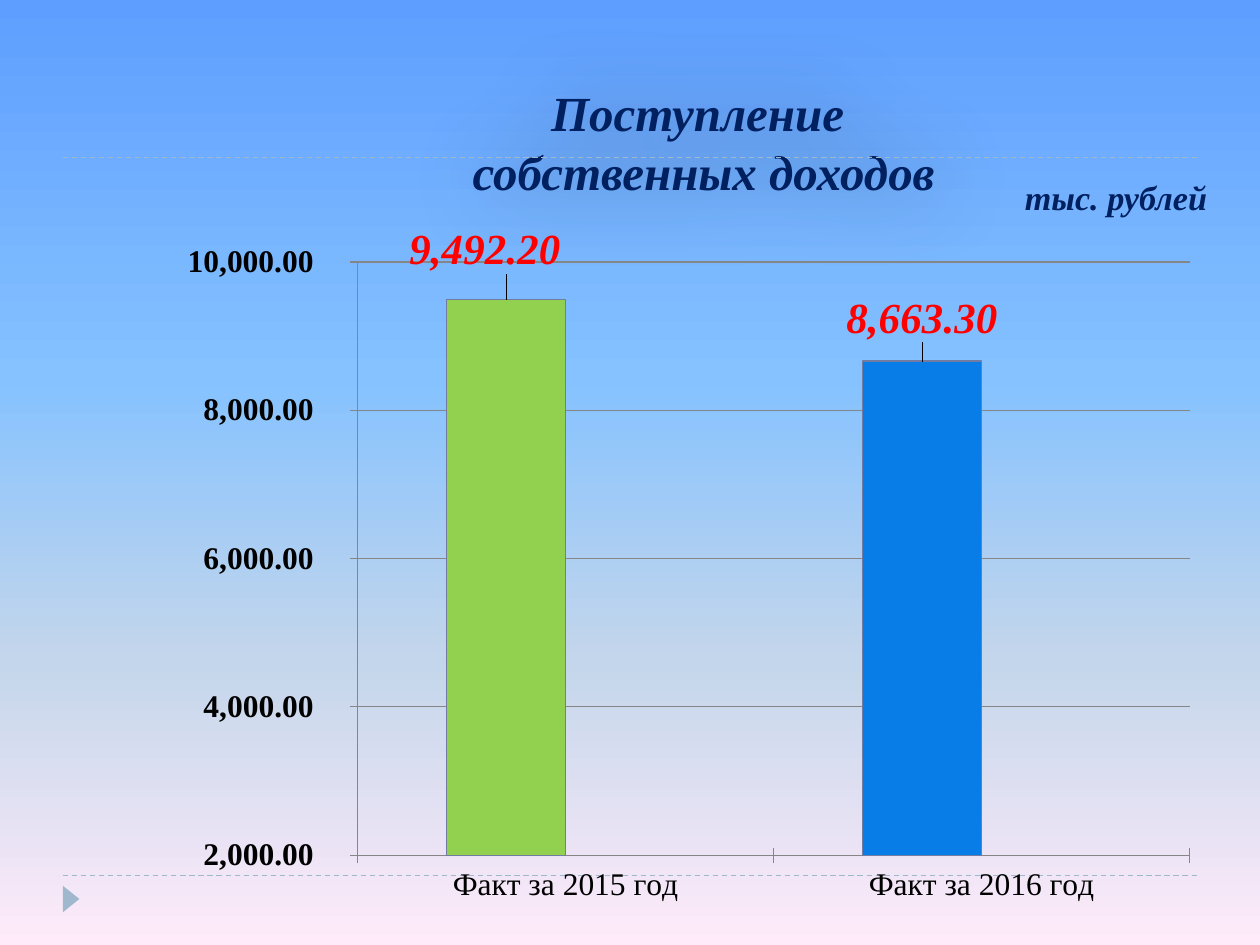
"""Build the slide comparing own revenue in 2015 and 2016."""
import lxml.etree
import pptx
import pptx.chart.data
import pptx.dml.color
import pptx.enum.chart
import pptx.enum.dml
import pptx.enum.shapes
import pptx.enum.text
import pptx.oxml.ns
import pptx.oxml.xmlchemy
import pptx.util

Pt = pptx.util.Pt
qn = pptx.oxml.ns.qn

TITLE = "Поступление \vсобственных доходов"
UNIT = "тыс. рублей"
CATEGORIES = ["Факт за 2015 год", "Факт за 2016 год"]
SERIES = [("Series 1", [9492.2, 8663.3]), ("Series 2", [None, None])]
LABEL_SHIFTS = [(-0.02, -0.03), (0, -0.02)]
PLOT_AREA = {"x": 0.19, "y": 0.05, "w": 0.79, "h": 0.86}
AXIS_FORMAT = r"_-* #,##0.00_р_._-;\-* #,##0.00_р_._-"
FONT = "Times New Roman"
COLORS = {"navy": "002060", "red": "FF0000", "black": "000000", "grid": "868686",
          "rule": "9FB8CD", "outline": "727CA3"}
BAR_COLORS = ["92D050", "097DE7"]
BACKGROUND = [(0, "5E9EFF"), (40, "85C2FF"), (70, "C4D6EB"), (100, "FFEBFA")]
RULE_LEFT, RULE_RIGHT, RULE_TOPS = 36, 684, [500.4, 90]


def rgb(value):
    return pptx.dml.color.RGBColor.from_string(value)


def style_font(font, size, color, bold=False, italic=False):
    font.name, font.size, font.bold, font.italic = FONT, Pt(size), bold, italic
    font.color.rgb = rgb(color)


def style_line(line, color):
    line.color.rgb = rgb(color)
    line.width = Pt(0.75)


def paint_background(page):
    fill = page.background.fill
    fill.gradient()
    fill.gradient_angle = 270
    stops = page.element.find(".//" + qn("a:gsLst"))
    for stop in list(stops):
        stops.remove(stop)
    for percent, color in BACKGROUND:
        stop = lxml.etree.SubElement(stops, qn("a:gs"), pos=str(percent * 1000))
        lxml.etree.SubElement(stop, qn("a:srgbClr"), val=color)


def add_decoration(page):
    for top in RULE_TOPS:
        rule = page.shapes.add_connector(
            pptx.enum.shapes.MSO_CONNECTOR.STRAIGHT,
            Pt(RULE_LEFT), Pt(top), Pt(RULE_RIGHT), Pt(top))
        style_line(rule.line, COLORS["rule"])
        rule.line.dash_style = pptx.enum.dml.MSO_LINE.DASH
        lxml.etree.SubElement(rule.element.spPr, qn("a:effectLst"))
    marker = page.shapes.add_shape(
        pptx.enum.shapes.MSO_SHAPE.ISOSCELES_TRIANGLE,
        Pt(33.1), Pt(509), Pt(15.1), Pt(9.4))
    marker.rotation = 90
    marker.shadow.inherit = False
    marker.fill.solid()
    marker.fill.fore_color.rgb = rgb(COLORS["rule"])
    marker.line.fill.background()


def write_text(box, text, size, align, anchor):
    frame = box.text_frame
    frame.text = text
    frame.word_wrap = True
    frame.auto_size = pptx.enum.text.MSO_AUTO_SIZE.NONE
    frame.vertical_anchor = anchor
    for para in frame.paragraphs:
        para.alignment = align
        for span in para.runs:
            style_font(span.font, size, COLORS["navy"], True, True)


def add_title(page):
    box = page.shapes.title
    box.left, box.top, box.width, box.height = Pt(84.2), Pt(22.3), Pt(635.8), Pt(95.8)
    write_text(box, TITLE, 28, pptx.enum.text.PP_ALIGN.CENTER,
               pptx.enum.text.MSO_ANCHOR.BOTTOM)
    effects = lxml.etree.SubElement(box.element.spPr, qn("a:effectLst"))
    shadow = lxml.etree.SubElement(
        effects, qn("a:outerShdw"), blurRad=str(Pt(50)), dist=str(Pt(4)),
        dir="0", algn="ctr", rotWithShape="0")
    color = lxml.etree.SubElement(shadow, qn("a:srgbClr"), val=COLORS["black"])
    lxml.etree.SubElement(color, qn("a:alpha"), val="40000")


def manual_layout(values, inner=False):
    layout = pptx.oxml.xmlchemy.OxmlElement("c:layout")
    manual = lxml.etree.SubElement(layout, qn("c:manualLayout"))
    if inner:
        for tag, value in [("layoutTarget", "inner"), ("xMode", "edge"), ("yMode", "edge")]:
            lxml.etree.SubElement(manual, qn("c:" + tag), val=value)
    for tag, value in values.items():
        lxml.etree.SubElement(manual, qn("c:" + tag), val=str(value))
    return layout


def style_axes(chart):
    for axis, bold in [(chart.category_axis, False), (chart.value_axis, True)]:
        style_font(axis.tick_labels.font, 18, COLORS["black"], bold)
        style_line(axis.format.line, COLORS["grid"])
        axis.major_tick_mark = pptx.enum.chart.XL_TICK_MARK.CROSS
    axis = chart.value_axis
    axis.minimum_scale, axis.maximum_scale, axis.major_unit = 2000, 10000, 2000
    axis.has_major_gridlines = True
    style_line(axis.major_gridlines.format.line, COLORS["grid"])
    axis.tick_labels.number_format = AXIS_FORMAT
    axis.tick_labels.number_format_is_linked = False


def style_bars(series):
    series.format.fill.solid()
    series.format.fill.fore_color.rgb = rgb(COLORS["outline"])
    style_line(series.format.line, COLORS["outline"])
    labels = series.data_labels
    labels.show_value = True
    labels.number_format = "#,##0.00"
    labels.number_format_is_linked = False
    labels.position = pptx.enum.chart.XL_LABEL_POSITION.OUTSIDE_END
    style_font(labels.font, 24.5, COLORS["red"], True, True)
    for index, (color, shift) in enumerate(zip(BAR_COLORS, LABEL_SHIFTS)):
        point = series.points[index]
        point.format.fill.solid()
        point.format.fill.fore_color.rgb = rgb(color)
        style_line(point.format.line, COLORS["outline"])
        label = point.data_label
        style_font(label.font, 24.5, COLORS["red"], True, True)
        label.position = pptx.enum.chart.XL_LABEL_POSITION.OUTSIDE_END
        node = labels._element.findall(qn("c:dLbl"))[index]
        node.insert(1, manual_layout(dict(zip("xy", shift))))


def add_revenue_chart(page):
    data = pptx.chart.data.CategoryChartData(number_format="#,##0.00")
    data.categories = CATEGORIES
    for name, values in SERIES:
        data.add_series(name, values)
    chart = page.shapes.add_chart(
        pptx.enum.chart.XL_CHART_TYPE.COLUMN_CLUSTERED,
        Pt(90), Pt(129.6), Pt(601.9), Pt(394.6), data).chart
    chart.has_legend = chart.has_title = False
    style_font(chart.font, 18, COLORS["black"])
    plot = chart.plots[0]
    plot.vary_by_categories = False
    plot.gap_width, plot.overlap = 150, 0
    style_axes(chart)
    style_bars(plot.series[0])
    plot.series[1].format.fill.solid()
    plot.series[1].format.fill.fore_color.rgb = rgb(COLORS["rule"])
    area = chart.element.find(".//" + qn("c:plotArea")) if hasattr(chart, "element") \
        else chart._chartSpace.find(".//" + qn("c:plotArea"))
    for layout in area.findall(qn("c:layout")):
        area.remove(layout)
    area.insert(0, manual_layout(PLOT_AREA, inner=True))


def main():
    deck = pptx.Presentation()
    deck.slide_width, deck.slide_height = Pt(720), Pt(540)
    page = deck.slides.add_slide(deck.slide_layouts[5])
    paint_background(page)
    add_decoration(page)
    add_title(page)
    add_revenue_chart(page)
    unit = page.shapes.add_textbox(Pt(568.1), Pt(95.8), Pt(128.9), Pt(33.8))
    write_text(unit, UNIT, 19.5, pptx.enum.text.PP_ALIGN.RIGHT,
               pptx.enum.text.MSO_ANCHOR.MIDDLE)
    deck.save("out.pptx")


if __name__ == "__main__":
    main()
